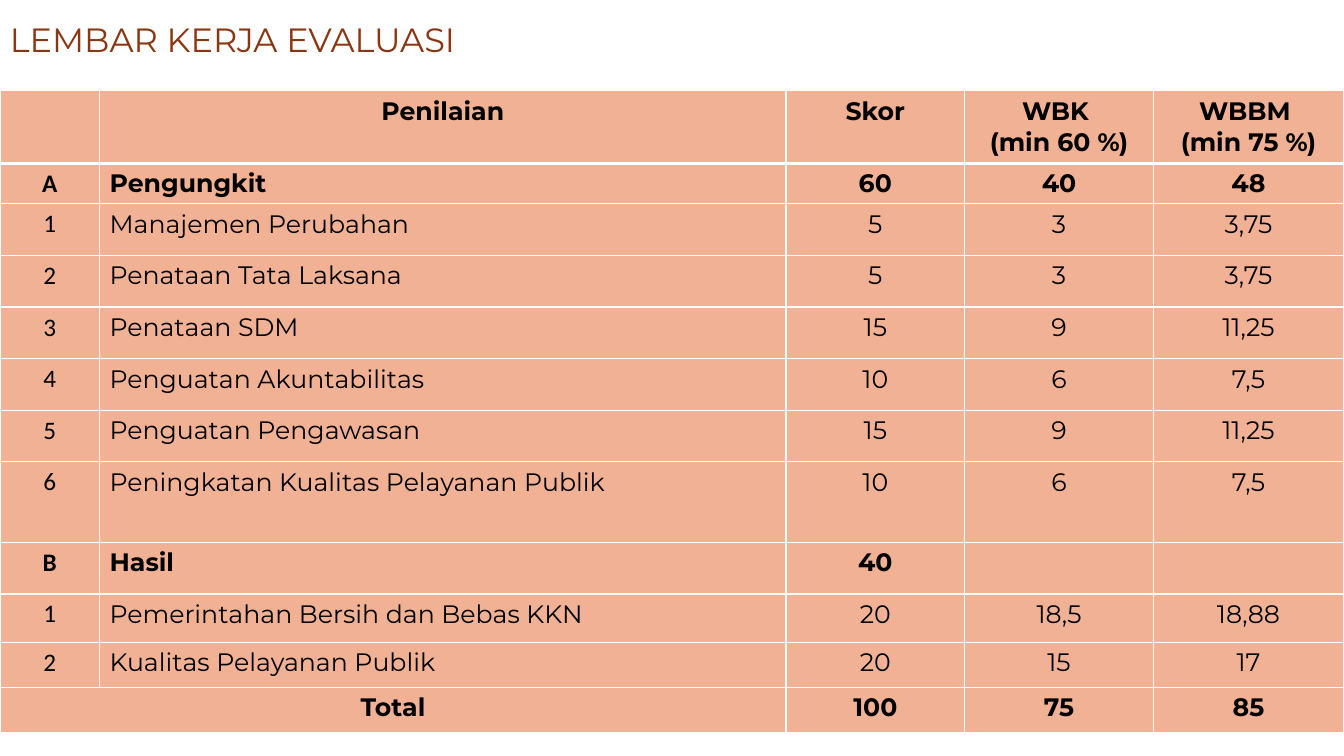
from lxml.etree import SubElement
from pptx import Presentation
from pptx.dml.color import RGBColor
from pptx.enum.text import MSO_ANCHOR, PP_ALIGN
from pptx.oxml.ns import qn
from pptx.util import Cm, Pt

PEACH = RGBColor(0xF0, 0xB1, 0x95)
RUST = RGBColor(0x89, 0x37, 0x13)
BLACK = RGBColor(0x00, 0x00, 0x00)
WHITE = RGBColor(0xFF, 0xFF, 0xFF)

COLUMN_WIDTHS = [2.51, 17.3, 4.5, 4.76, 4.79]
ROW_HEIGHTS = [1.83, 0.97] + [1.3] * 5 + [2.03, 1.3, 1.22, 1.14, 1.14]
SCORES = [
    ["", "Penilaian", "Skor", "WBK \n(min 60 %)", "WBBM \n(min 75 %)"],
    ["A", "Pengungkit", "60", "40", "48"],
    ["1", "Manajemen Perubahan", "5", "3", "3,75"],
    ["2", "Penataan Tata Laksana", "5", "3", "3,75"],
    ["3", "Penataan SDM", "15", "9", "11,25"],
    ["4", "Penguatan Akuntabilitas", "10", "6", "7,5"],
    ["5", "Penguatan Pengawasan", "15", "9", "11,25"],
    ["6", "Peningkatan Kualitas Pelayanan Publik", "10", "6", "7,5"],
    ["B", "Hasil", "40", "", ""],
    ["1", "Pemerintahan Bersih dan Bebas KKN", "20", "18,5", "18,88"],
    ["2", "Kualitas Pelayanan Publik", "20", "15", "17"],
    ["Total", "", "100", "75", "85"],
]
HEADER, TOTAL = 0, len(SCORES) - 1


class EvaluationSlide:
    font = "Montserrat"
    number_font = "Calibri"

    def __init__(self, slide):
        self.slide = slide

    def format_runs(self, frame, size, color, bold=False, font=None, align=PP_ALIGN.LEFT):
        for paragraph in frame.paragraphs:
            paragraph.alignment = align
            for run in paragraph.runs:
                run.font.name = font or self.font
                run.font.size = Pt(size)
                run.font.bold = bold
                run.font.color.rgb = color

    def title(self, text, left, top, width, height):
        heading = self.slide.shapes.add_textbox(Cm(left), Cm(top), Cm(width), Cm(height))
        frame = heading.text_frame
        frame.word_wrap = True
        frame.vertical_anchor = MSO_ANCHOR.MIDDLE
        frame.text = text
        frame.paragraphs[0].line_spacing = 0.9
        self.format_runs(frame, 24, RUST)

    def borders(self, cell, top, bottom):
        properties = cell._tc.get_or_add_tcPr()
        for side, points in (("L", 1), ("R", 1), ("T", top), ("B", bottom)):
            line = SubElement(properties, qn(f"a:ln{side}"), w=str(Pt(points)))
            fill = SubElement(line, qn("a:solidFill"))
            SubElement(fill, qn("a:srgbClr"), val=str(WHITE))

    def score_cell(self, cell, text, row, column):
        self.borders(cell, 3 if row == HEADER + 1 else 1, 3 if row == HEADER else 1)
        cell.fill.solid()
        cell.fill.fore_color.rgb = PEACH
        cell.text_frame.text = text
        is_item = SCORES[row][0].isdigit()
        is_label = column == 1 and row != HEADER
        is_number = column == 0 and row != TOTAL
        self.format_runs(
            cell.text_frame, 18, BLACK, bold=not is_item,
            font=self.number_font if is_number else self.font,
            align=PP_ALIGN.LEFT if is_label else PP_ALIGN.CENTER,
        )

    def score_table(self, left, top):
        scores = self.slide.shapes.add_table(
            len(ROW_HEIGHTS), len(COLUMN_WIDTHS), Cm(left), Cm(top),
            Cm(sum(COLUMN_WIDTHS)), Cm(sum(ROW_HEIGHTS)),
        ).table
        for column, width in zip(scores.columns, COLUMN_WIDTHS):
            column.width = Cm(width)
        for row, height in zip(scores.rows, ROW_HEIGHTS):
            row.height = Cm(height)
        for row, values in enumerate(SCORES):
            for column, text in enumerate(values):
                self.score_cell(scores.cell(row, column), text, row, column)
        scores.cell(TOTAL, 0).merge(scores.cell(TOTAL, 1))


def main():
    presentation = Presentation()
    presentation.slide_width = Cm(33.87)
    presentation.slide_height = Cm(19.05)
    evaluation = EvaluationSlide(presentation.slides.add_slide(presentation.slide_layouts[6]))
    evaluation.title("LEMBAR KERJA EVALUASI", 0, 0, 33.87, 2.08)
    evaluation.score_table(0, 2.29)
    presentation.save("out.pptx")


if __name__ == "__main__":
    main()
